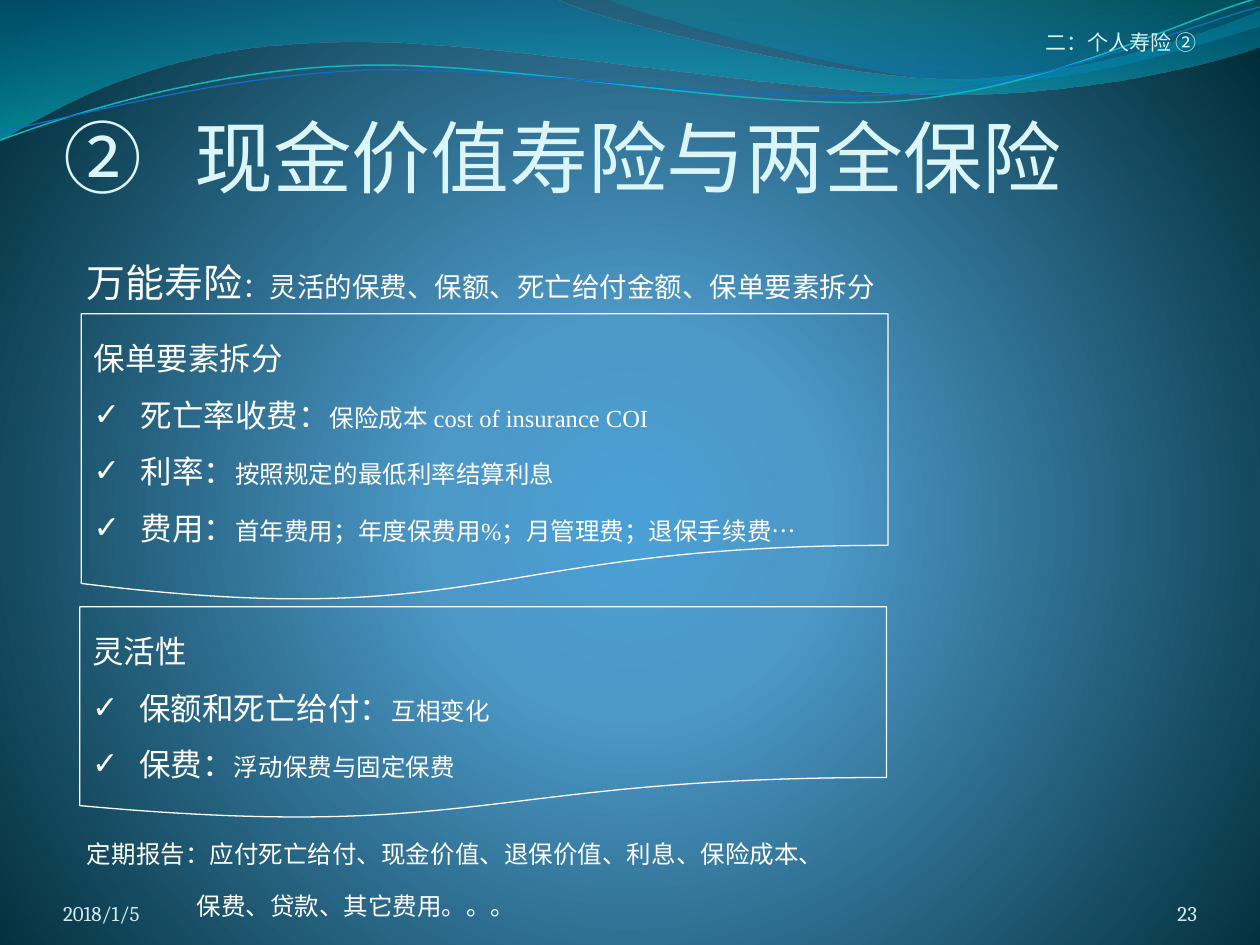
from math import cos, sin, radians
from pptx import Presentation
from pptx.util import Pt
from pptx.dml.color import RGBColor as RGB
from pptx.enum.shapes import MSO_SHAPE as Shape
from pptx.enum.text import MSO_ANCHOR as Anchor, MSO_AUTO_SIZE as Fit, PP_ALIGN as Align
from pptx.oxml import parse_xml
from pptx.oxml.ns import nsdecls, qn

# Content: a line is a list of (text, size key)
TITLE = "②\t现金价值寿险与两全保险"
NOTES = [  # text, box, right aligned, font, color
    ("2018/1/5", (36, 500.4, 168, 28.8), False, "Cambria", "pale"),
    ("23", (624, 500.4, 60, 28.8), True, "Cambria", "pale"),
    ("二：个人寿险 ②", (541.4, 0, 142.6, 31), True, "Calibri", "light"),
]
INTRO = [[("万能寿险", "lead"), ("：灵活的保费、保额、死亡给付金额、保单要素拆分", "intro")]]
REPORT = [
    [("定期报告：应付死亡给付、现金价值、退保价值、利息、保险成本、", "body")],
    [("保费、贷款、其它费用。。。", "body")],
]
CARDS = [  # heading, box, items
    ("保单要素拆分", (46.4, 179.3, 461, 165), [
        ("死亡率收费：", "保险成本 cost of insurance COI"),
        ("利率：", "按照规定的最低利率结算利息"),
        ("费用：", "首年费用；年度保费用%；月管理费；退保手续费…"),
    ]),
    ("灵活性", (45.6, 346.7, 461, 121.7), [
        ("保额和死亡给付：", "互相变化"),
        ("保费：", "浮动保费与固定保费"),
    ]),
]

THEME = {
    "size": {"title": 45, "lead": 22.2, "intro": 15.7, "head": 18, "body": 14, "note": 12},
    "color": {"text": "FFFFFF", "light": "DBF5F9", "pale": "D1EAEE"},
    "back": [(0, "4AA0D6", 100), (25, "4C98C7", 100), (100, "002C38", 100)],
}

# Waves in inches: start point, then segments of one (line) or three (curve) points
BANDS = [
    ((0, 0), [
        [(4.4, -0.01)],
        [(4.76, 0.17), (6.64, 0.63), (7.58, 0.63)],
        [(8.53, 0.63), (9.58, 0.26), (10, 0.09)],
        [(10.01, 0.36)],
        [(9.83, 0.44), (8.7, 0.76), (7.46, 0.75)],
        [(6.22, 0.75), (3.82, 0.28), (2.57, 0.34)],
        [(1.29, 0.36), (0.46, 0.83), (-0.01, 1.13)],
        [(0, 0)],
    ], [(0, "0074A1", 45), (100, "00C6CF", 55)]),
    ((4.79, -0.01), [
        [(5.09, 0.11), (6.82, 0.62), (7.69, 0.65)],
        [(8.56, 0.69), (9.61, 0.32), (10, 0.21)],
        [(10, 0)],
        [(4.79, -0.01)],
    ], [(0, "00A1A9", 30), (80, "008BBF", 45)]),
]
TILT = -2.7
STRANDS = [  # start, segments, middle, color, width
    ((0, 1.11), [
        [(0.48, 0.93), (1.58, 0.57), (2.77, 0.52)],
        [(3.95, 0.47), (5.93, 0.89), (7.13, 0.8)],
        [(8.33, 0.71), (9.38, 0.15), (9.98, -0.02)],
    ], (4.99, 0.58), "0AB8BF", 0.85),
    ((0, 1.04), [
        [(0.47, 0.96), (1.64, 0.61), (2.83, 0.56)],
        [(4.03, 0.51), (5.97, 0.84), (7.17, 0.75)],
        [(8.36, 0.67), (9.41, 0.21), (10, 0.06)],
    ], (5, 0.59), "0F6FC6", 0.75),
]


def color(key):
    return RGB.from_string(THEME["color"][key])


def grad(stops, way):
    rows = "".join(
        f'<a:gs pos="{pos * 1000}"><a:srgbClr val="{rgb}">'
        f'<a:alpha val="{alpha * 1000}"/></a:srgbClr></a:gs>'
        for pos, rgb, alpha in stops)
    return f'<a:gradFill {nsdecls("a")} rotWithShape="1"><a:gsLst>{rows}</a:gsLst>{way}</a:gradFill>'


def turn(dot, mid, angle):
    a, x, y = radians(angle), dot[0] - mid[0], dot[1] - mid[1]
    return mid[0] + x * cos(a) - y * sin(a), mid[1] + x * sin(a) + y * cos(a)


def wave(start, parts, close, mid=(0, 0), tilt=0):
    """Draw an outline, then join each three-point segment into a curve."""
    dots = [start] + [dot for part in parts for dot in part]
    dots = [tuple(72 * v for v in turn(dot, mid, -tilt)) for dot in dots]
    pen = slide.shapes.build_freeform(*dots[0], scale=Pt(1))
    pen.add_line_segments(dots[1:], close=close)
    shape = pen.convert_to_shape()
    shape.rotation = tilt
    steps = iter(list(shape._element.iter(qn("a:lnTo"))))
    for part in parts:
        group = [next(steps) for _ in part]
        if len(group) == 3:
            curve = parse_xml(f'<a:cubicBezTo {nsdecls("a")}/>')
            group[0].addprevious(curve)
            for step in group:
                curve.append(step[0])
                step.getparent().remove(step)
    shape.shadow.inherit = False
    shape.fill.background()
    return shape


def place(shape, box):
    shape.left, shape.top, shape.width, shape.height = map(Pt, box)


def frame(shape, anchor, pad=None):
    tf = shape.text_frame
    tf.auto_size, tf.word_wrap, tf.vertical_anchor = Fit.NONE, True, anchor
    if pad is not None:
        tf.margin_left = tf.margin_right = tf.margin_bottom = 0
        tf.margin_top = Pt(pad)
    return tf


def style(par, font, tint="text", align=Align.LEFT, space=None):
    par.alignment = align
    par.font.name, par.font.color.rgb = font, color(tint)
    if space:
        par.line_spacing = space


def fill(tf, lines, font, space, first=None):
    """Write lines of sized runs, one paragraph each."""
    for i, line in enumerate(lines):
        par = tf.add_paragraph() if i else tf.paragraphs[0]
        style(par, first if first and i == 0 else font, space=space)
        for text, key in line:
            run = par.add_run()
            run.text = text
            (run if len(line) > 1 else par).font.size = Pt(THEME["size"][key])


def extend(par, *parts):
    for part in parts:
        par._p.get_or_add_pPr().insert_element_before(
            parse_xml(part.replace("/>", f' {nsdecls("a")}/>', 1) if part.endswith("/>") else part),
            "a:tabLst", "a:defRPr", "a:extLst")


def indent(par, left, hang=0):
    props = par._p.get_or_add_pPr()
    props.set("marL", str(Pt(left)))
    props.set("indent", str(Pt(-hang)))


deck = Presentation()
deck.slide_width, deck.slide_height = Pt(720), Pt(540)
slide = deck.slides.add_slide(deck.slide_layouts[3])

# Background
glow = '<a:path path="circle"><a:fillToRect l="10000" t="110000" r="10000" b="100000"/></a:path>'
slide._element.cSld.insert(0, parse_xml(
    f'<p:bg {nsdecls("p", "a")}><p:bgPr>{grad(THEME["back"], glow)}<a:effectLst/></p:bgPr></p:bg>'))

# Waves
for start, parts, stops in BANDS:
    band = wave(start, parts, True)
    band.line.fill.background()
    props = band._element.spPr
    props.replace(props.find(qn("a:noFill")), parse_xml(grad(stops, '<a:lin ang="5400000" scaled="1"/>')))
for start, parts, mid, rgb, width in STRANDS:
    line = wave(start, parts, False, mid, TILT).line
    line.color.rgb, line.width = RGB.from_string(rgb), Pt(width)

# Header, date and page number
for text, box, right, font, tint in NOTES:
    par = frame(slide.shapes.add_textbox(*map(Pt, box)), Anchor.BOTTOM, 0).paragraphs[0]
    par.text = text
    style(par, font, tint, Align.RIGHT if right else Align.LEFT)
    par.font.size = Pt(THEME["size"]["note"])

# Title
title = slide.shapes.title
place(title, (36, 43.2, 576.7, 72.7))
par = frame(title, Anchor.BOTTOM, 3.6).paragraphs[0]
par.text = TITLE
style(par, "Calibri", "light")
par.font.size = Pt(THEME["size"]["title"])
extend(par, f'<a:tabLst {nsdecls("a")}><a:tab pos="{Pt(75)}" algn="l"/></a:tabLst>')

# Intro and report
BODIES = [(1, INTRO, (42.5, 128.2, 499, 56.9), [0]), (2, REPORT, (42.5, 465.8, 578.2, 64.8), [0, 62.6])]
for idx, lines, box, lefts in BODIES:
    body = slide.placeholders[idx]
    place(body, box)
    tf = frame(body, Anchor.TOP)
    fill(tf, lines, "Cambria", 1.6)
    for par, left in zip(tf.paragraphs, lefts):
        indent(par, left)
        extend(par, "<a:buNone/>")

# Cards
for head, box, items in CARDS:
    card = slide.shapes.add_shape(Shape.FLOWCHART_DOCUMENT, *map(Pt, box))
    card.shadow.inherit = False
    card.fill.background()
    card.line.color.rgb, card.line.width = color("text"), Pt(0.75)
    tf = frame(card, Anchor.TOP)
    tf.word_wrap = False
    lines = [[(head, "head")]] + [[(name, "head"), (text, "body")] for name, text in items]
    fill(tf, lines, "Times New Roman", 1.5, "DejaVu Sans")
    for par in tf.paragraphs[1:]:
        indent(par, 27, 27)
        extend(par, '<a:buFont typeface="DejaVu Sans"/>', '<a:buChar char="✓"/>')

deck.save("out.pptx")
